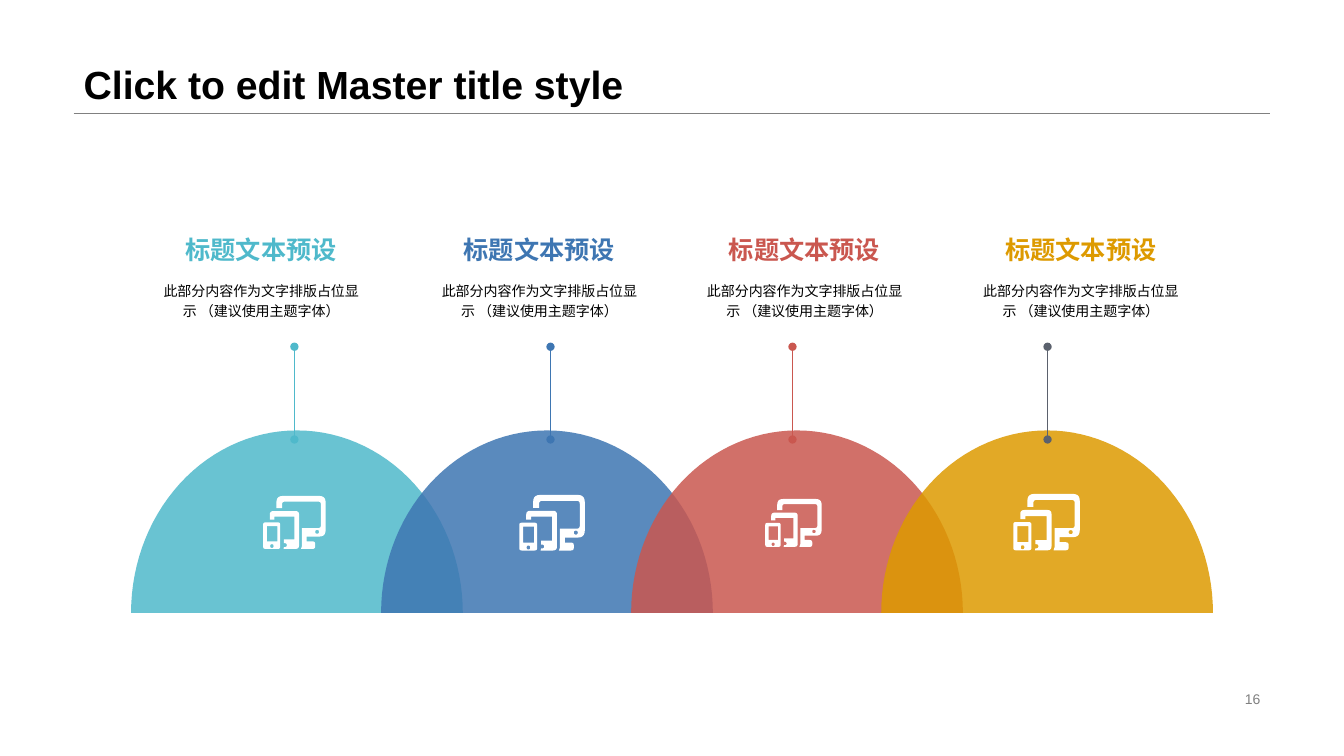
from math import cos, pi, sin
from lxml import etree
from pptx import Presentation
from pptx.dml.color import RGBColor
from pptx.enum.shapes import MSO_CONNECTOR
from pptx.enum.text import MSO_ANCHOR, MSO_AUTO_SIZE, PP_ALIGN
from pptx.oxml.ns import qn
from pptx.util import Inches, Pt

LINE = MSO_CONNECTOR.STRAIGHT
MID, LOW = MSO_ANCHOR.MIDDLE, MSO_ANCHOR.BOTTOM
LEFT, MIDST, RIGHT = PP_ALIGN.LEFT, PP_ALIGN.CENTER, PP_ALIGN.RIGHT
FIXED = MSO_AUTO_SIZE.NONE

TITLE = "Click to edit Master title style"
PAGE = "16"
HEAD = "标题文本预设"
NOTE = "此部分内容作为文字排版占位显示 （建议使用主题字体）"
BLACK, GREY, WHITE = "000000", "808080", "FFFFFF"

ITEMS = [
    {"color": "4FB9CB", "stem": "4FB9CB", "text": 1.62, "pin": 2.92, "icon": (2.61, 4.92, 0.62)},
    {"color": "3E76B2", "stem": "3E76B2", "text": 4.38, "pin": 5.46, "icon": (5.15, 4.91, 0.65)},
    {"color": "CA574F", "stem": "CA574F", "text": 7.01, "pin": 7.86, "icon": (7.59, 4.95, 0.56)},
    {"color": "DD9A00", "stem": "5B616D", "text": 9.75, "pin": 10.39, "icon": (10.05, 4.9, 0.66)},
]


def box(x, y, w, h, r=0):
    return [(x, y, r), (x + w, y, r), (x + w, y + h, r), (x, y + h, r)]


UNITS = 66
TABLET = [
    (7, 16, 4), (38, 16, 4), (38, 56, 4), (21.5, 56, 0), (22, 54, 0),
    (25, 54, 2), (25, 50, 2), (22, 50, 0), (22, 46, 0), (33, 46, 0),
    (33, 22, 0), (12, 22, 0), (12, 25, 0), (7, 25, 0),
]
SCREEN = [
    (14, 0, 7), (66, 0, 7), (66, 43, 7), (46, 43, 0), (46, 48, 0),
    (55, 48, 3), (55, 56, 3), (40, 56, 0), (41, 53, 0), (41, 34, 0),
    (61, 34, 3), (61, 6, 3), (20, 6, 3), (20, 13, 0), (14, 13, 0),
]
DEVICES = [
    box(0, 28, 18, 28, 2.5), box(4, 32, 11, 16), box(7.5, 51, 3.5, 4, 1.75),
    box(55, 36, 4, 4, 2), TABLET, SCREEN,
]

DOME = {"left": 1.3, "step": 2.48, "rx": 1.645, "ry": 1.81, "base": 6.08}
STEPS = 60


def rgb(code):
    return RGBColor.from_string(code)


def write(frame, text, color, size, bold=False, align=LEFT, gap=None, **look):
    for key, value in {"auto_size": FIXED, "word_wrap": True, **look}.items():
        setattr(frame, key, value)
    frame.text = text
    para = frame.paragraphs[0]
    para.alignment = align
    para.line_spacing = gap
    for key, value in {"name": "Arial", "size": Pt(size), "bold": bold}.items():
        setattr(para.font, key, value)
    para.font.color.rgb = rgb(color)


def label(x, y, w, h, *args, **look):
    shape = slide.shapes.add_textbox(Inches(x), Inches(y), Inches(w), Inches(h))
    write(shape.text_frame, *args, vertical_anchor=MID, **look)


def line(x1, y1, x2, y2, color, width, dots=False):
    link = slide.shapes.add_connector(LINE, Inches(x1), Inches(y1), Inches(x2), Inches(y2))
    link.line.color.rgb = rgb(color)
    link.line.width = Pt(width)
    if dots:
        for end in ("a:headEnd", "a:tailEnd"):
            etree.SubElement(link.line._get_or_add_ln(), qn(end), type="oval")
    etree.SubElement(link.element.spPr, qn("a:effectLst"))


def outline(loops, color, alpha=None):
    loops = [[(Inches(x), Inches(y)) for x, y in loop] for loop in loops]
    pen = slide.shapes.build_freeform(*loops[0][0])
    for i, loop in enumerate(loops):
        if i:
            pen.move_to(*loop[0])
        pen.add_line_segments(loop[1:], close=True)
    shape = pen.convert_to_shape()
    shape.shadow.inherit = False
    shape.fill.solid()
    shape.fill.fore_color.rgb = rgb(color)
    shape.line.fill.background()
    if alpha:
        tint = shape.element.spPr.find(".//" + qn("a:srgbClr"))
        etree.SubElement(tint, qn("a:alpha"), val=str(alpha * 1000))


def toward(a, b, dist):
    dx, dy = b[0] - a[0], b[1] - a[1]
    part = dist / (dx * dx + dy * dy) ** 0.5
    return a[0] + dx * part, a[1] + dy * part


def bend(loop):
    points = []
    for i, spot in enumerate(loop):
        x, y, r = spot
        if not r:
            points.append((x, y))
            continue
        start = toward(spot, loop[i - 1], r)
        end = toward(spot, loop[(i + 1) % len(loop)], r)
        for t in (0, 0.2, 0.4, 0.6, 0.8, 1):
            points.append(tuple(
                (1 - t) ** 2 * a + 2 * t * (1 - t) * b + t * t * c
                for a, b, c in zip(start, (x, y), end)))
    return points


def stem(item):
    line(item["pin"], 4.36, item["pin"], 3.44, item["stem"], 1, True)


def dome(i, color):
    mid = DOME["left"] + DOME["rx"] + i * DOME["step"]
    turns = [pi * k / STEPS for k in range(STEPS + 1)]
    arc = [(mid - DOME["rx"] * cos(t), DOME["base"] - DOME["ry"] * sin(t)) for t in turns]
    outline([arc], color, 85)


def icon(left, top, width):
    unit = width / UNITS
    outline([[(left + x * unit, top + y * unit) for x, y in bend(loop)]
             for loop in DEVICES], WHITE)


deck = Presentation()
deck.slide_width, deck.slide_height = Inches(13.33), Inches(7.5)
slide = deck.slides.add_slide(deck.slide_layouts[5])

line(0.73, 1.12, 12.6, 1.12, GREY, 0.25)
title = slide.shapes.title
place = {"left": 0.73, "top": 0, "width": 11.87, "height": 1.12}
for key, value in place.items():
    setattr(title, key, Inches(value))
write(title.text_frame, TITLE, BLACK, 28, True, gap=0.9, vertical_anchor=LOW)
label(9.42, 6.82, 3.18, 0.23, PAGE, GREY, 10, align=RIGHT)

flush = dict.fromkeys(("margin_left", "margin_top", "margin_right", "margin_bottom"), 0)
for item in ITEMS:
    label(item["text"], 2.62, 1.94, 0.69, NOTE, BLACK, 10, align=MIDST, gap=1.2, **flush)
    label(item["text"], 2.29, 1.94, 0.36, HEAD, item["color"], 18, True,
          align=MIDST, **{**flush, "word_wrap": False})

stem(ITEMS[0])
for i, item in enumerate(ITEMS):
    dome(i, item["color"])
for item in ITEMS[1:]:
    stem(item)
for item in ITEMS:
    icon(*item["icon"])

deck.save("out.pptx")
